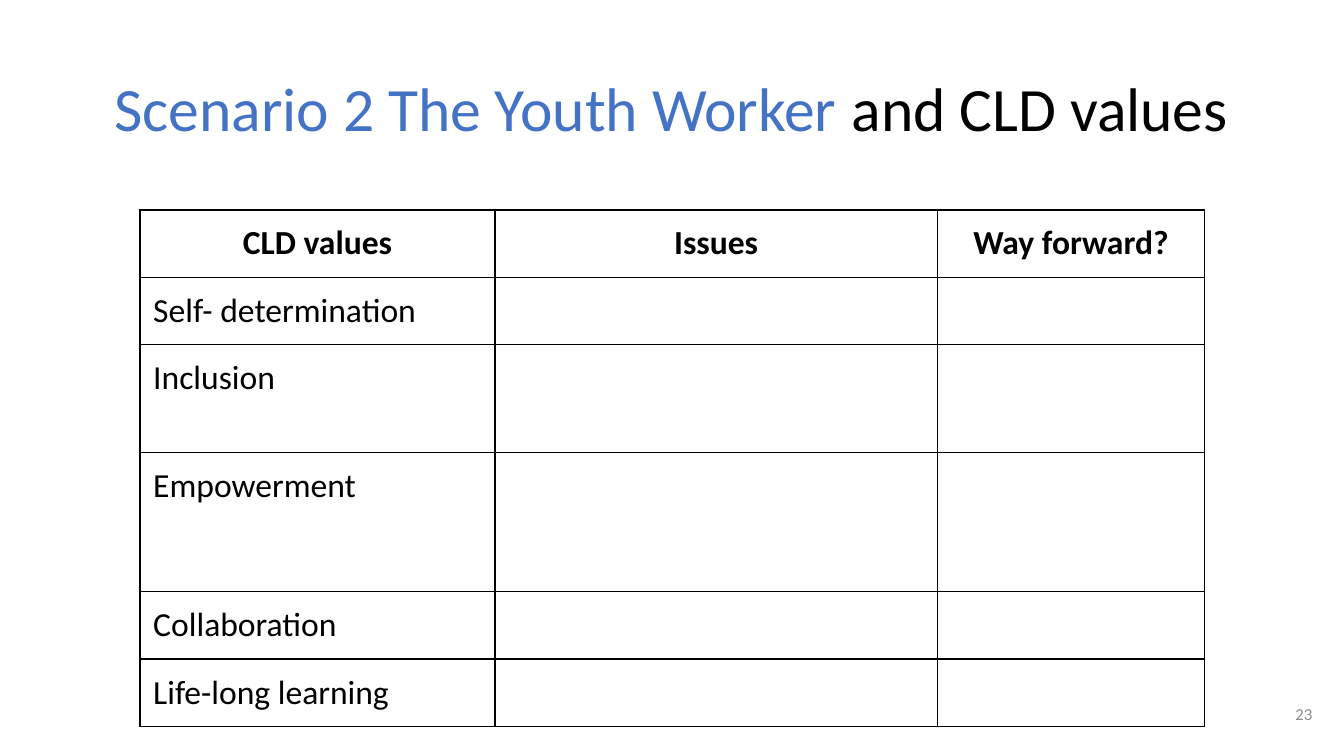
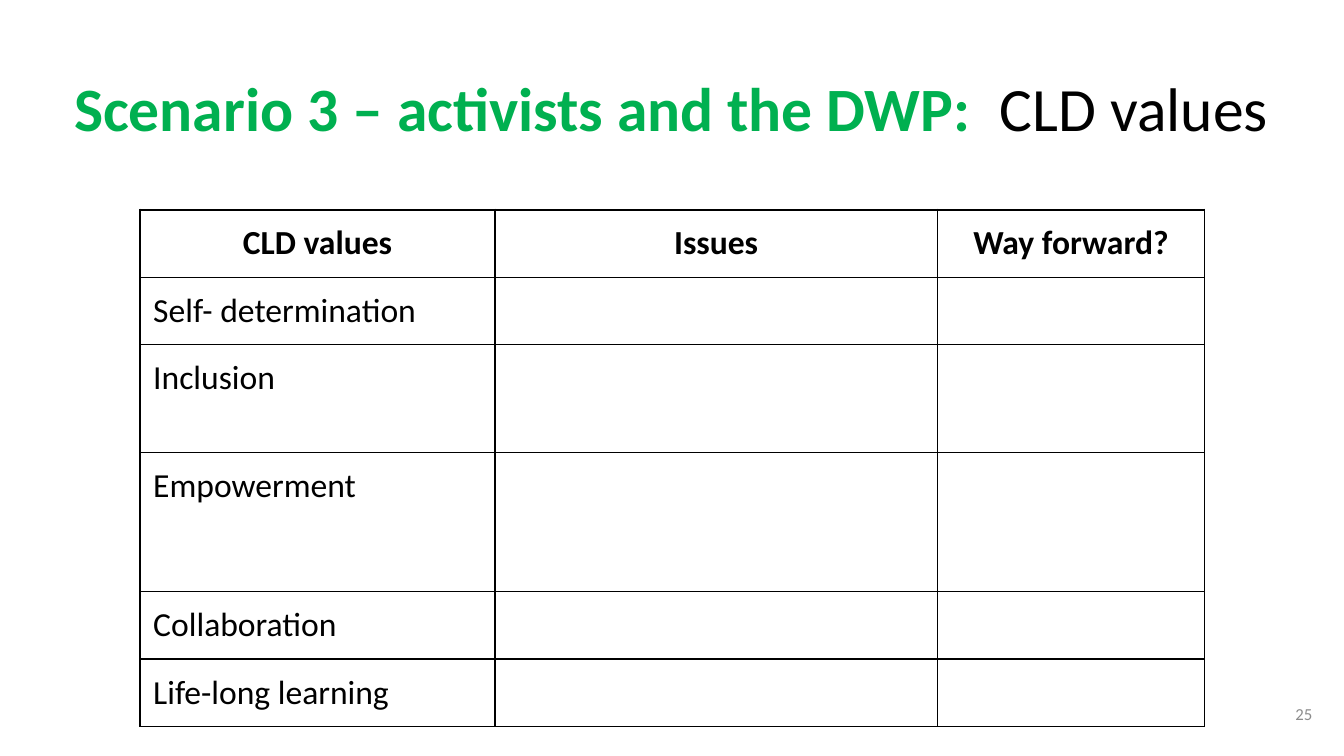
from dataclasses import dataclass

from lxml import etree
from pptx import Presentation
from pptx import util as u
from pptx.dml.color import RGBColor
from pptx.enum import text
from pptx.oxml import ns

PX = 9144  # 100 px to the inch


@dataclass(frozen=True)
class Theme:
    font: str = "Calibri"
    ink: str = "000000"
    blue: str = "4472C4"
    green: str = "00B050"
    grey: str = "8C8C8C"
    head: int = 44
    body: int = 24
    foot: int = 12
    thin: float = 1
    thick: float = 1.5
    pad: int = 13


T = Theme()
TITLE = (45, 65, 1242, 84)
FOOT = (1235, 680, 80, 57)
LEFT, TOP = 139, 208
COLS = (352, 439, 265)
ROWS = (67, 67, 107, 138, 67, 67)
HEADS = ("CLD values", "Issues", "Way forward?")
VALUES = ("Self- determination", "Inclusion", "Empowerment",
          "Collaboration", "Life-long learning")
GRID = [HEADS] + [(value, "", "") for value in VALUES]
# Line weights, outermost edges included
ACROSS = (T.thick, T.thin, T.thin, T.thin, T.thin, T.thick, T.thin)
DOWN = (T.thick, T.thin, T.thin, T.thick)

SLIDES = (
    ("Scenario 2 The Youth Worker ", "and CLD values", T.blue, False, "23"),
    ("Scenario 3 – activists and the DWP: ", " CLD values", T.green, True, "25"),
)


def style(run, size, color=T.ink, bold=False):
    font = run.font
    font.name, font.size, font.bold = T.font, u.Pt(size), bold
    font.color.rgb = RGBColor.from_string(color)


def inset(box):
    """Give a text frame or a cell the shared margin on all four sides."""
    box.margin_left = box.margin_right = T.pad * PX
    box.margin_top = box.margin_bottom = T.pad * PX


prs = Presentation()
prs.slide_width, prs.slide_height = u.Inches(13.333), u.Inches(7.5)

for lead, rest, color, bold, number in SLIDES:
    slide = prs.slides.add_slide(prs.slide_layouts[5])

    # Title in two colours
    title = slide.shapes.title
    title.left, title.top, title.width, title.height = (n * PX for n in TITLE)
    frame = title.text_frame
    inset(frame)
    frame.word_wrap = True
    frame.auto_size = text.MSO_AUTO_SIZE.NONE
    frame.vertical_anchor = text.MSO_ANCHOR.TOP
    para = frame.paragraphs[0]
    para.alignment, para.line_spacing = text.PP_ALIGN.CENTER, 0.9
    for words, tint, strong in ((lead, color, bold), (rest, T.ink, False)):
        run = para.add_run()
        run.text = words
        style(run, T.head, tint, strong)

    # Table of values
    table = slide.shapes.add_table(
        len(ROWS), len(COLS), LEFT * PX, TOP * PX,
        sum(COLS) * PX, sum(ROWS) * PX).table
    table.first_row = table.horz_banding = False
    for col, width in zip(table.columns, COLS):
        col.width = width * PX
    for row, height in zip(table.rows, ROWS):
        row.height = height * PX
    for r, line in enumerate(GRID):
        for c, words in enumerate(line):
            cell = table.cell(r, c)
            inset(cell)
            cell.fill.background()
            if words:
                para = cell.text_frame.paragraphs[0]
                para.text = words
                style(para.runs[0], T.body, bold=r == 0)
                if r == 0:
                    para.alignment = text.PP_ALIGN.CENTER
            props = cell._tc.get_or_add_tcPr()
            edges = {"lnL": DOWN[c], "lnR": DOWN[c + 1],
                     "lnT": ACROSS[r], "lnB": ACROSS[r + 1]}
            for i, (tag, weight) in enumerate(edges.items()):
                edge = etree.Element(ns.qn("a:" + tag), w=str(u.Pt(weight)))
                fill = etree.SubElement(edge, ns.qn("a:solidFill"))
                etree.SubElement(fill, ns.qn("a:srgbClr"), val=T.ink)
                props.insert(i, edge)

    # Slide number
    frame = slide.shapes.add_textbox(*(n * PX for n in FOOT)).text_frame
    inset(frame)
    frame.word_wrap = True
    frame.vertical_anchor = text.MSO_ANCHOR.MIDDLE
    para = frame.paragraphs[0]
    para.text, para.alignment = number, text.PP_ALIGN.RIGHT
    style(para.runs[0], T.foot, T.grey)

prs.save("out.pptx")
